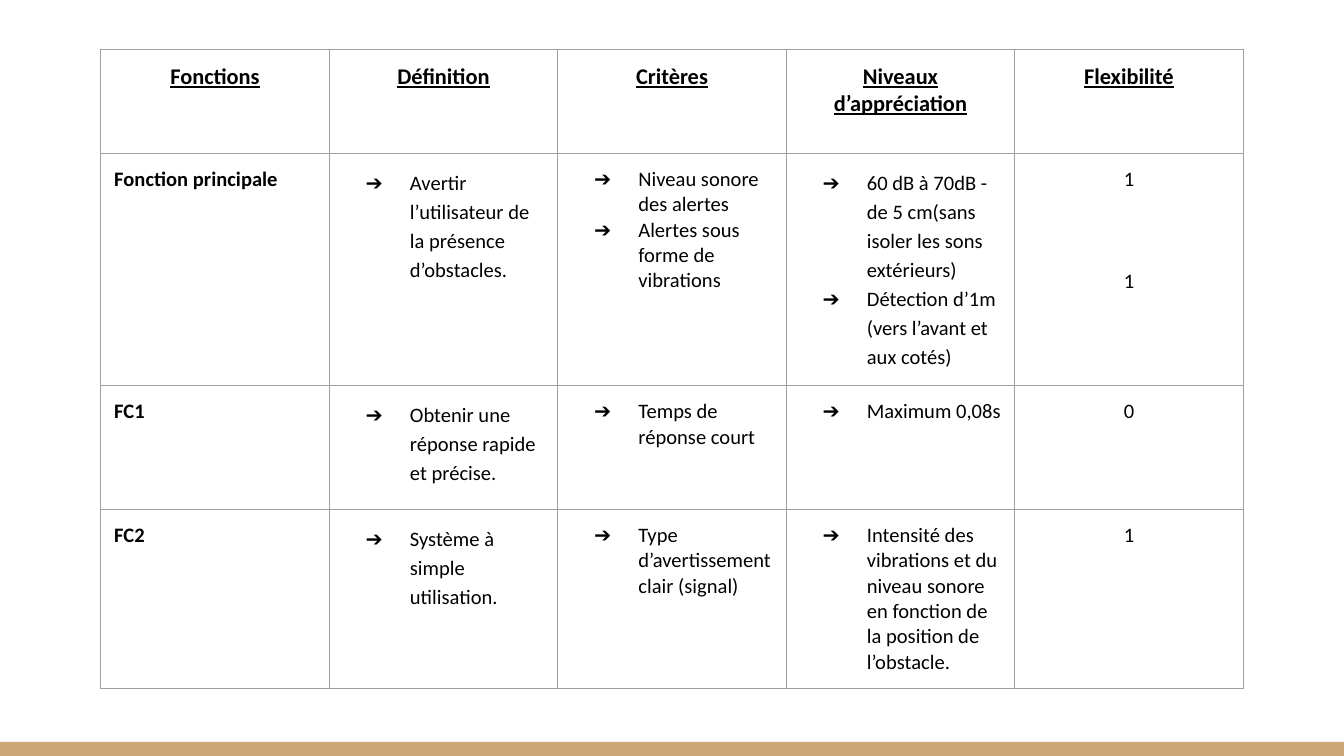
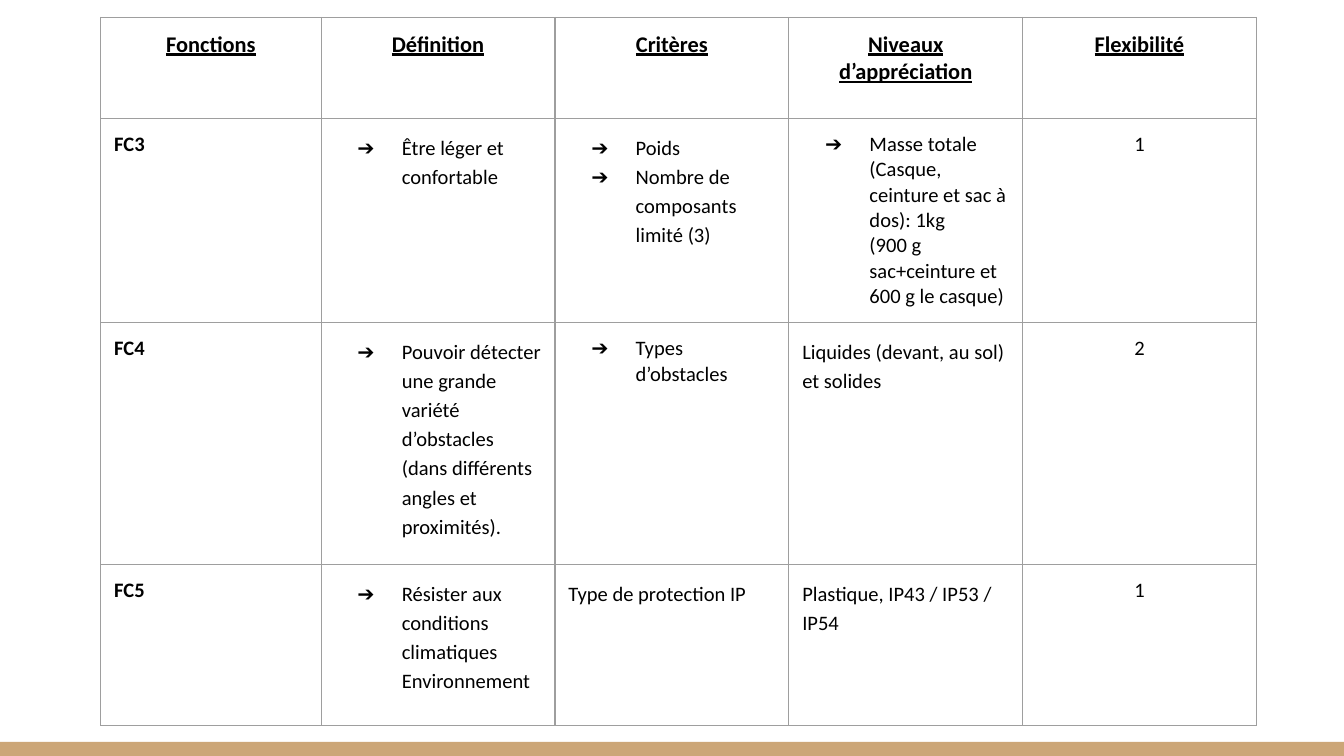
from lxml.etree import SubElement
from pptx import Presentation
from pptx.dml.color import RGBColor
from pptx.enum.shapes import MSO_SHAPE as Shape
from pptx.enum.text import PP_ALIGN as Align
from pptx.oxml.ns import qn
from pptx.util import Inches, Pt

COLORS = {"text": "000000", "border": "9E9E9E", "band": "CCA677", "page": "FFFFFF"}
FONT = "Calibri"
HEADINGS = ["Fonctions", "Définition", "Critères", "Niveaux d’appréciation", "Flexibilité"]

# Each style: alignment, left indent, first-line indent, line spacing, size, bold, underline
LEFT, CENTER = Align.LEFT, Align.CENTER
STYLES = {
    "heading": (CENTER, 0, 0, 1.0, 12, True, True),
    "name": (LEFT, 0, 0, 1.0, 11, True, False),
    "level": (CENTER, 0, 0, 1.0, 11, False, False),
    "arrow": (LEFT, 0.5, -0.33, 1.0, 11, False, False),
    "loose arrow": (LEFT, 0.5, -0.33, 1.15, 11, False, False),
    "indented": (LEFT, 0.5, 0, 1.0, 11, False, False),
    "loose": (LEFT, 0, 0, 1.15, 11, False, False),
}

# Each row: name, definition, criteria, appreciation levels, flexibility
PAGES = [
    {
        "at": (0.75, 0.37),
        "widths": [1.7] * 5,
        "heights": [0.77, 1.73, 0.92, 1.33],
        "rows": [
            ("Fonction principale",
             "Avertir l’utilisateur de la présence d’obstacles.",
             [("arrow", "Niveau sonore des alertes"),
              ("arrow", "Alertes sous forme de vibrations")],
             [("loose arrow", "60 dB à 70dB - de 5 cm(sans isoler les sons extérieurs)"),
              ("loose arrow", "Détection d’1m (vers l’avant et aux cotés)")],
             ["1", "1"]),
            ("FC1",
             "Obtenir une réponse rapide et précise.",
             [("arrow", "Temps de réponse court")],
             [("arrow", "Maximum 0,08s")],
             ["0"]),
            ("FC2",
             "Système à simple utilisation.",
             [("arrow", "Type d’avertissement clair (signal)")],
             [("arrow", "Intensité des vibrations et du niveau sonore "
                        "en fonction de la position de l’obstacle.")],
             ["1"]),
        ],
    },
    {
        "at": (0.75, 0.13),
        "widths": [1.64] + [1.74] * 4,
        "heights": [0.75, 1.51, 1.8, 1.2],
        "rows": [
            ("FC3",
             "Être léger et confortable",
             [("loose arrow", "Poids"),
              ("loose arrow", "Nombre de composants limité (3)")],
             [("arrow", "Masse totale (Casque, ceinture et sac à dos): 1kg"),
              ("indented", "(900 g sac+ceinture et 600 g le casque)")],
             ["1"]),
            ("FC4",
             "Pouvoir détecter une grande variété d’obstacles "
             "(dans différents angles et proximités).",
             [("arrow", "Types d’obstacles")],
             [("loose", "Liquides (devant, au sol) et solides")],
             ["2"]),
            ("FC5",
             "Résister aux conditions climatiques Environnement",
             [("loose", "Type de protection IP")],
             [("loose", "Plastique, IP43 / IP53 / IP54")],
             ["1"]),
        ],
    },
]


def write_paragraph(para, style, text):
    align, left, first, spacing, size, bold, underline = STYLES[style]
    para.text = text
    para.alignment = align
    para.line_spacing = spacing
    props = para._p.get_or_add_pPr()
    props.set("marL", str(Inches(left)))
    props.set("indent", str(Inches(first)))
    if "arrow" in style:
        color = SubElement(props, qn("a:buClr"))
        SubElement(color, qn("a:srgbClr"), val=COLORS["text"])
        SubElement(props, qn("a:buFont"), typeface=FONT)
        SubElement(props, qn("a:buChar"), char="➔")
    font = para.font
    font.name, font.size, font.bold, font.underline = FONT, Pt(size), bold, underline
    font.color.rgb = RGBColor.from_string(COLORS["text"])


def format_cell(cell):
    """Give the cell even margins, thin grey borders and no fill."""
    cell.margin_left = cell.margin_right = Inches(0.1)
    cell.margin_top = cell.margin_bottom = Inches(0.1)
    props = cell._tc.get_or_add_tcPr()
    for side in ("a:lnL", "a:lnR", "a:lnT", "a:lnB"):
        line = SubElement(props, qn(side), w=str(Pt(0.75)))
        fill = SubElement(line, qn("a:solidFill"))
        SubElement(fill, qn("a:srgbClr"), val=COLORS["border"])
    cell.fill.background()


deck = Presentation()
deck.slide_width = Inches(10)
deck.slide_height = deck.slide_width * 9 // 16
band_top = Inches(5.52)

for content in PAGES:
    page = deck.slides.add_slide(deck.slide_layouts[6])
    page.background.fill.solid()
    page.background.fill.fore_color.rgb = RGBColor.from_string(COLORS["page"])

    band = page.shapes.add_shape(Shape.RECTANGLE, 0, band_top,
                                 deck.slide_width, deck.slide_height - band_top)
    band.shadow.inherit = False
    band.fill.solid()
    band.fill.fore_color.rgb = RGBColor.from_string(COLORS["band"])
    band.line.fill.background()

    widths, heights = content["widths"], content["heights"]
    left, top = content["at"]
    table = page.shapes.add_table(len(heights), len(widths), Inches(left), Inches(top),
                                  Inches(sum(widths)), Inches(sum(heights))).table
    table.first_row = table.horz_banding = False
    for column, width in zip(table.columns, widths):
        column.width = Inches(width)
    for row, height in zip(table.rows, heights):
        row.height = Inches(height)

    grid = [[[("heading", heading)] for heading in HEADINGS]]
    for name, definition, criteria, appreciation, levels in content["rows"]:
        grid.append([[("name", name)], [("loose arrow", definition)], criteria,
                     appreciation, [("level", level) for level in levels]])

    for row, cells in zip(table.rows, grid):
        for cell, paragraphs in zip(row.cells, cells):
            format_cell(cell)
            frame = cell.text_frame
            for index, (style, text) in enumerate(paragraphs):
                para = frame.add_paragraph() if index else frame.paragraphs[0]
                write_paragraph(para, style, text)
                if style == "level" and index:
                    para.space_before = Pt(41)

deck.save("out.pptx")
